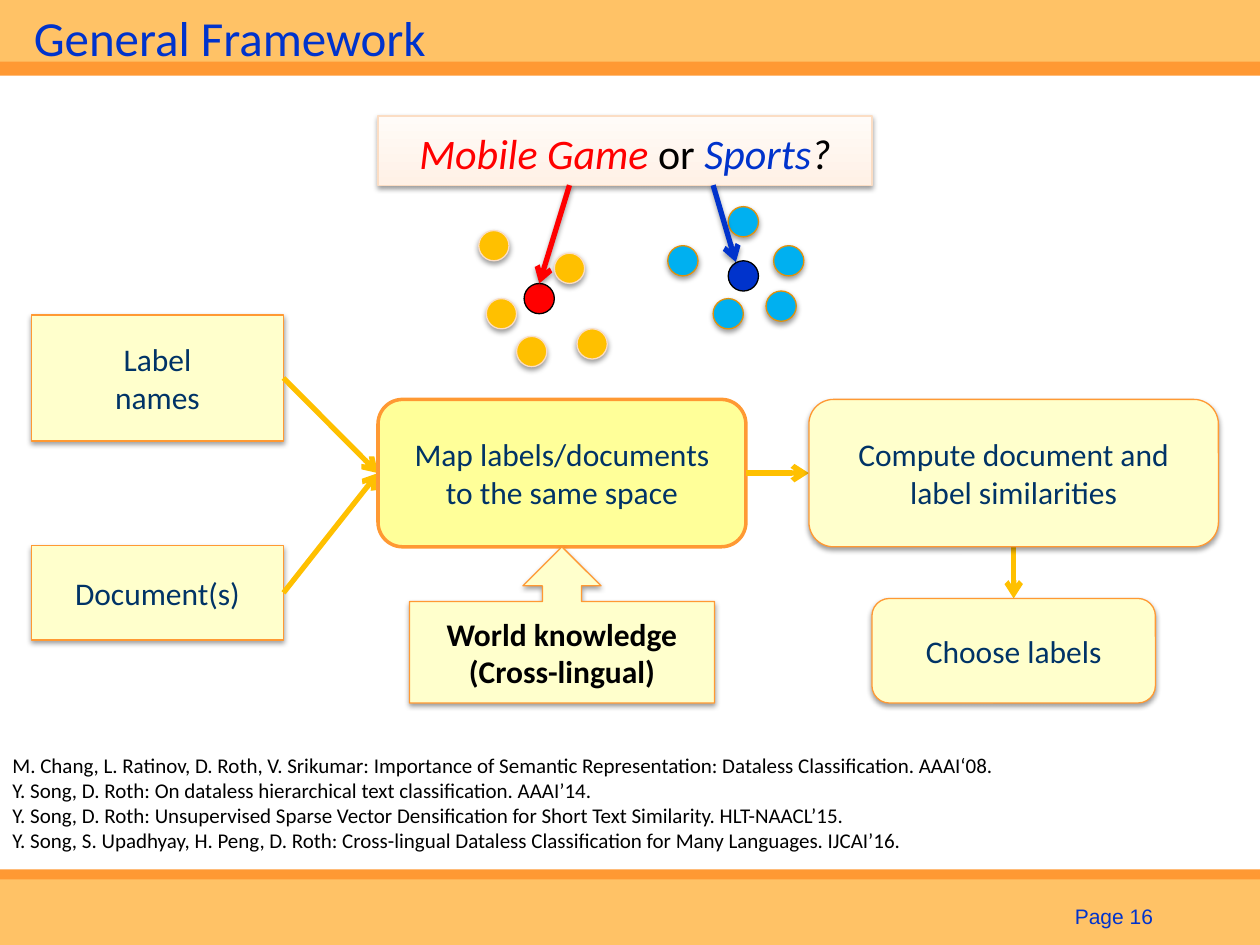
import pptx
import pptx.dml.color
import pptx.enum.shapes
import pptx.enum.text
import pptx.oxml
import pptx.oxml.ns
import pptx.util
from lxml import etree

Inches = pptx.util.Inches
Pt = pptx.util.Pt
SHAPE = pptx.enum.shapes.MSO_SHAPE
ALIGN = pptx.enum.text.PP_ALIGN
ANCHOR = pptx.enum.text.MSO_ANCHOR

BLUE, RED, AMBER, SKY = "0033CC", "FF0000", "FFC000", "00B0F0"
ORANGE, PEACH, CREAM, NAVY = "FF9933", "FFC266", "FFFFCC", "003366"
BLACK, PALE = "000000", "FBDDC4"


def rgb(value):
    return pptx.dml.color.RGBColor.from_string(value)


def set_effects(s, shadow):
    """Give a shape or connector a soft drop shadow, or none at all."""
    effects = etree.SubElement(s._element.spPr, pptx.oxml.ns.qn("a:effectLst"))
    if shadow:
        effects.append(pptx.oxml.parse_xml(
            f'<a:outerShdw {pptx.oxml.ns.nsdecls("a")} blurRad="{Pt(3.1)}" '
            f'dist="{Pt(1.6)}" dir="5400000" rotWithShape="0">'
            f'<a:srgbClr val="{BLACK}"><a:alpha val="38000"/></a:srgbClr>'
            '</a:outerShdw>'))


def add_text(sp, paragraphs, size=18, color=NAVY, font="Calibri", bold=False,
             align=ALIGN.CENTER, anchor=ANCHOR.MIDDLE, spacing=None):
    """Each paragraph is a string or a list of (text, color, italic) runs."""
    tf = sp.text_frame
    tf.word_wrap = True
    tf.vertical_anchor = anchor
    for i, content in enumerate(paragraphs):
        p = tf.paragraphs[0] if i == 0 else tf.add_paragraph()
        p.alignment = align
        if spacing:
            p.line_spacing = spacing
        runs = [(content, color, False)] if isinstance(content, str) else content
        for text, run_color, italic in runs:
            r = p.add_run()
            r.text = text
            r.font.name = font
            r.font.size = Pt(size)
            r.font.bold = bold
            r.font.italic = italic
            r.font.color.rgb = rgb(run_color)


def add_box(s, kind, x, y, w, h, fill, line=None, width=0.75, shadow=False):
    sp = s.shapes.add_shape(kind, Inches(x), Inches(y), Inches(w), Inches(h))
    sp.fill.solid()
    sp.fill.fore_color.rgb = rgb(fill)
    if line:
        sp.line.color.rgb = rgb(line)
        sp.line.width = Pt(width)
    else:
        sp.line.fill.background()
    set_effects(sp, shadow)
    return sp


def add_textbox(s, x, y, w, h, paragraphs, **fmt):
    sp = s.shapes.add_textbox(Inches(x), Inches(y), Inches(w), Inches(h))
    add_text(sp, paragraphs, align=fmt.pop("align", ALIGN.LEFT), **fmt)


def add_arrow(s, x1, y1, x2, y2, color, shadow=False):
    line = s.shapes.add_connector(pptx.enum.shapes.MSO_CONNECTOR.STRAIGHT,
                                  Inches(x1), Inches(y1), Inches(x2), Inches(y2))
    line.line.color.rgb = rgb(color)
    line.line.width = Pt(3)
    etree.SubElement(line.line._get_or_add_ln(), pptx.oxml.ns.qn("a:tailEnd"), type="arrow")
    set_effects(line, shadow)


def add_header(s, x, y, w, h):
    add_box(s, SHAPE.RECTANGLE, x, y, w, h, ORANGE)
    add_box(s, SHAPE.RECTANGLE, x, y, w, h - 0.11, PEACH)
    add_textbox(s, x + 0.17, y, w - 0.17, 0.58, ["General Framework"], size=28, color=BLUE)


def add_footer(s, x, y, w, h):
    add_box(s, SHAPE.RECTANGLE, x, y, w, h, ORANGE)
    add_box(s, SHAPE.RECTANGLE, x, y + 0.08, w, h - 0.08, PEACH)
    add_textbox(s, x + 8.25, y + 0.27, 1, 0.25, ["Page 16"], size=12, color=BLUE,
                font="Arial", align=ALIGN.RIGHT, anchor=ANCHOR.BOTTOM)


def add_cluster(s, x, y, center, center_fill, points, fill, line):
    """Document dots around a label dot, offsets from the top left corner."""
    d = 0.24
    add_box(s, SHAPE.OVAL, x + center[0], y + center[1], d, d, center_fill, BLACK)
    for dx, dy in points:
        add_box(s, SHAPE.OVAL, x + dx, y + dy, d, d, fill, line, shadow=True)


def add_question(s, x, y, w, h):
    # Label clusters
    add_cluster(s, x + 2.3, y + 0.72, (0.48, 0.43), BLUE,
                [(0.78, 0.67), (0.36, 0.73), (0.84, 0.31), (0.48, 0), (0, 0.31)],
                SKY, "E3910A")
    add_cluster(s, x + 0.8, y + 0.91, (0.36, 0.42), RED,
                [(0.6, 0.18), (0.06, 0.54), (0.3, 0.84), (0, 0), (0.78, 0.78)],
                AMBER, PALE)
    # Question panel
    panel = add_box(s, SHAPE.RECTANGLE, x, y, w, h, "FFF1E6", PALE, shadow=True)
    panel.fill.gradient()
    panel.fill.gradient_angle = 90
    for stop, color in zip(panel.fill.gradient_stops, ("FFF1E6", "FFFBF8")):
        stop.color.rgb = rgb(color)
    for stop, position in zip(panel.fill.gradient_stops, (0, 1)):
        stop.position = position
    add_text(panel, [[("Mobile Game ", RED, True), ("or ", BLACK, False),
                      ("Sports", BLUE, True), ("?", BLACK, True)]],
             size=24, anchor=ANCHOR.TOP, spacing=1.1)
    # Pointers to the label dots
    add_arrow(s, x + 1.52, y + h, x + 1.28, y + 1.33, RED, shadow=True)
    add_arrow(s, x + 2.66, y + h, x + 2.84, y + 1.16, BLUE, shadow=True)


def add_flow(s, x, y, w, h):
    map_x, map_w, step_h = x + 2.75, 2.92, 1.17
    step_y = y + 0.67
    mid_y, low_y = step_y + step_h / 2, step_y + step_h
    compute_w = 3.25
    compute_x = x + w - compute_w
    compute_mid = compute_x + compute_w / 2
    bottom = y + h

    # Inputs, each with an arrow to the mapping step
    for top, height, lines in ((y, 1, ["Label", "names"]),
                               (y + 1.83, 0.75, ["Document(s)"])):
        sp = add_box(s, SHAPE.RECTANGLE, x, top, 2, height, CREAM, ORANGE, shadow=True)
        add_text(sp, lines)
        add_arrow(s, x + 2, top + height / 2, map_x, mid_y, AMBER)

    # Mapping step
    sp = add_box(s, SHAPE.FLOWCHART_ALTERNATE_PROCESS, map_x, step_y, map_w, step_h,
                 "FFFF99", ORANGE, width=2)
    add_text(sp, ["Map labels/documents to the same space"])
    add_arrow(s, map_x + map_w, mid_y, compute_x, mid_y, AMBER)
    add_arrow(s, compute_mid, low_y, compute_mid, bottom - 0.83, AMBER)

    # World knowledge feeding the mapping step
    sp = add_box(s, SHAPE.UP_ARROW_CALLOUT, map_x + 0.25, low_y, 2.42, bottom - low_y,
                 CREAM, ORANGE, shadow=True)
    add_text(sp, ["World knowledge", "(Cross-lingual)"], color=BLACK, bold=True)

    # Similarity and choice steps
    for left, top, width, height, text in (
            (compute_x, step_y, compute_w, step_h, "Compute document and label similarities"),
            (compute_x + 0.5, bottom - 0.83, 2.25, 0.83, "Choose labels")):
        sp = add_box(s, SHAPE.ROUNDED_RECTANGLE, left, top, width, height,
                     CREAM, ORANGE, shadow=True)
        add_text(sp, [text])


def add_references(s, x, y, w, h):
    add_textbox(s, x, y, w, h, [
        "M. Chang, L. Ratinov, D. Roth, V. Srikumar: Importance of Semantic Representation: "
        "Dataless Classification. AAAI‘08.",
        "Y. Song, D. Roth: On dataless hierarchical text classification. AAAI’14.",
        "Y. Song, D. Roth: Unsupervised Sparse Vector Densification for Short Text Similarity. "
        "HLT-NAACL’15.",
        "Y. Song, S. Upadhyay, H. Peng, D. Roth: Cross-lingual Dataless Classification for "
        "Many Languages. IJCAI’16.",
    ], size=12, color=BLACK, anchor=ANCHOR.TOP)


def main():
    prs = pptx.Presentation()
    prs.slide_width, prs.slide_height = Inches(10), Inches(7.5)
    s = prs.slides.add_slide(prs.slide_layouts[6])
    add_header(s, 0, 0, 10, 0.6)
    add_footer(s, 0, 6.9, 10, 0.6)
    add_flow(s, 0.25, 2.5, 9.42, 3.08)
    add_references(s, 0, 5.92, 10, 0.91)
    add_question(s, 3, 0.92, 3.92, 0.55)
    prs.save("out.pptx")


if __name__ == "__main__":
    main()
